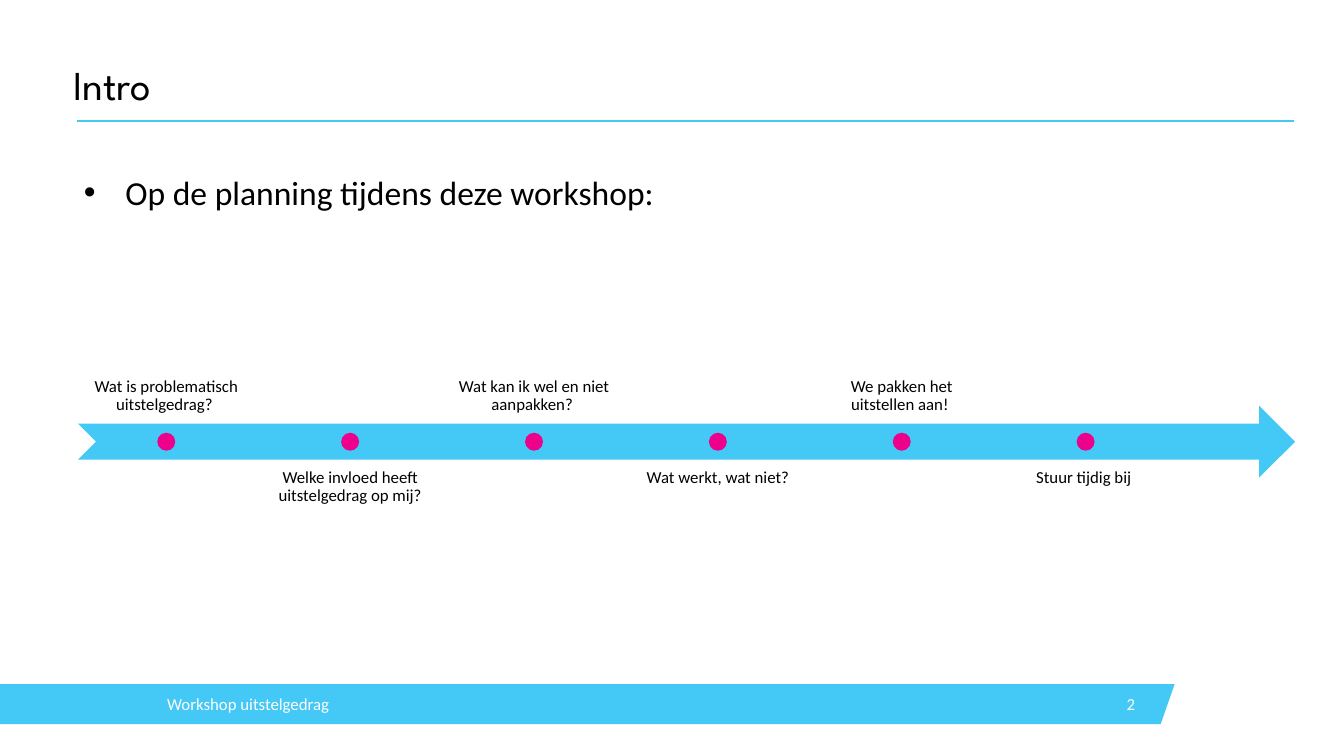
"""Build the intro slide of a workshop, with its planning as a timeline."""
from dataclasses import dataclass

from lxml import etree
from pptx import Presentation
from pptx import util as u
from pptx.dml import color
from pptx.enum import shapes, text
from pptx.oxml import ns

CYAN, PINK, BLACK, WHITE = "44C8F5", "EC008C", "000000", "FFFFFF"
LABEL_LEFT, LABEL_WIDTH, LABEL_HEIGHT, PITCH = 2.97, 6.63, 2.72, 6.95
ABOVE_TOP, BELOW_TOP, DOT_TOP, DOT_SIZE = 13.31, 17.37, 16.36, 0.68
STEPS = [
    "Wat is problematisch uitstelgedrag? ",
    "Welke invloed heeft uitstelgedrag op mij?",
    "Wat kan ik wel en niet aanpakken? ",
    "Wat werkt, wat niet?",
    "We pakken het uitstellen aan! ",
    "Stuur tijdig bij ",
]


@dataclass
class Area:
    left: float
    top: float
    width: float
    height: float

    def lengths(self) -> list:
        return [u.Cm(n) for n in (self.left, self.top, self.width, self.height)]


@dataclass
class Style:
    size: int = 18
    font: str = "Calibri"
    ink: str = BLACK
    align: text.PP_ALIGN = text.PP_ALIGN.LEFT
    anchor: text.MSO_ANCHOR = text.MSO_ANCHOR.TOP
    inset_x: float = 0
    inset_y: float = 0
    spacing: float = 0.9
    bullet_indent: float = 0


def rgb(code: str) -> color.RGBColor:
    return color.RGBColor.from_string(code)


def paint(shape, code: str) -> None:
    shape.shadow.inherit = False
    shape.fill.solid()
    shape.fill.fore_color.rgb = rgb(code)
    shape.line.fill.background()


def add_preset(slide, kind: shapes.MSO_SHAPE, area: Area, code: str) -> None:
    paint(slide.shapes.add_shape(kind, *area.lengths()), code)


def add_bullet(paragraph, indent: float) -> None:
    properties = paragraph._p.get_or_add_pPr()
    properties.set("marL", str(u.Cm(indent)))
    properties.set("indent", str(u.Cm(-indent)))
    etree.SubElement(properties, ns.qn("a:buFont")).set("typeface", "Arial")
    etree.SubElement(properties, ns.qn("a:buChar")).set("char", "•")


def add_text(slide, wording: str, area: Area, style: Style) -> None:
    frame = slide.shapes.add_textbox(*area.lengths()).text_frame
    frame.word_wrap = True
    frame.vertical_anchor = style.anchor
    frame.margin_left = frame.margin_right = u.Cm(style.inset_x)
    frame.margin_top = frame.margin_bottom = u.Cm(style.inset_y)
    paragraph = frame.paragraphs[0]
    paragraph.text = wording
    if style.bullet_indent:
        add_bullet(paragraph, style.bullet_indent)
    paragraph.alignment = style.align
    paragraph.line_spacing = style.spacing
    paragraph.font.size = u.Pt(style.size)
    paragraph.font.name = style.font
    paragraph.font.color.rgb = rgb(style.ink)


def add_footer(slide) -> None:
    top, bottom = u.Cm(25.86), u.Cm(27.38)
    outline = slide.shapes.build_freeform(0, top)
    outline.add_line_segments([(u.Cm(44.4), top), (u.Cm(43.87), bottom), (0, bottom)])
    paint(outline.convert_to_shape(), CYAN)
    middle = text.MSO_ANCHOR.MIDDLE
    add_text(slide, "Workshop uitstelgedrag", Area(6.32, 25.86, 17.15, 1.52),
             Style(ink=WHITE, anchor=middle, spacing=1.0))
    add_text(slide, "2", Area(40.39, 25.86, 2.77, 1.52),
             Style(ink=WHITE, anchor=middle, align=text.PP_ALIGN.RIGHT,
                   inset_x=0.25, inset_y=0.13, spacing=1.0))


def add_heading(slide) -> None:
    add_text(slide, "Intro", Area(2.77, 2.46, 46.05, 1.75),
             Style(size=44, font="League Spartan"))
    rule = slide.shapes.add_connector(shapes.MSO_CONNECTOR.STRAIGHT,
                                      u.Cm(2.9), u.Cm(4.57), u.Cm(48.9), u.Cm(4.57))
    rule.line.color.rgb = rgb(CYAN)
    rule.line.width = u.Pt(2.25)
    etree.SubElement(rule._element.spPr, ns.qn("a:effectLst"))


def add_timeline(slide) -> None:
    add_preset(slide, shapes.MSO_SHAPE.NOTCHED_RIGHT_ARROW, Area(2.95, 15.34, 46, 2.72), CYAN)
    for index, step in enumerate(STEPS):
        left = LABEL_LEFT + index * PITCH
        below = index % 2 == 1
        add_text(slide, step,
                 Area(left, BELOW_TOP if below else ABOVE_TOP, LABEL_WIDTH, LABEL_HEIGHT),
                 Style(align=text.PP_ALIGN.CENTER, inset_x=0.36, inset_y=0.36,
                       anchor=text.MSO_ANCHOR.TOP if below else text.MSO_ANCHOR.BOTTOM))
        dot_left = left + (LABEL_WIDTH - DOT_SIZE) / 2
        add_preset(slide, shapes.MSO_SHAPE.OVAL,
                   Area(dot_left, DOT_TOP, DOT_SIZE, DOT_SIZE), PINK)


def main() -> None:
    deck = Presentation()
    deck.slide_width, deck.slide_height = u.Cm(50.8), u.Cm(28.58)
    slide = deck.slides.add_slide(deck.slide_layouts[6])
    add_footer(slide)
    add_heading(slide)
    add_text(slide, "Op de planning tijdens deze workshop:", Area(2.92, 6.53, 46.05, 16.97),
             Style(size=36, inset_x=0.25, inset_y=0.13, bullet_indent=1.57))
    add_timeline(slide)
    deck.save("out.pptx")


if __name__ == "__main__":
    main()
